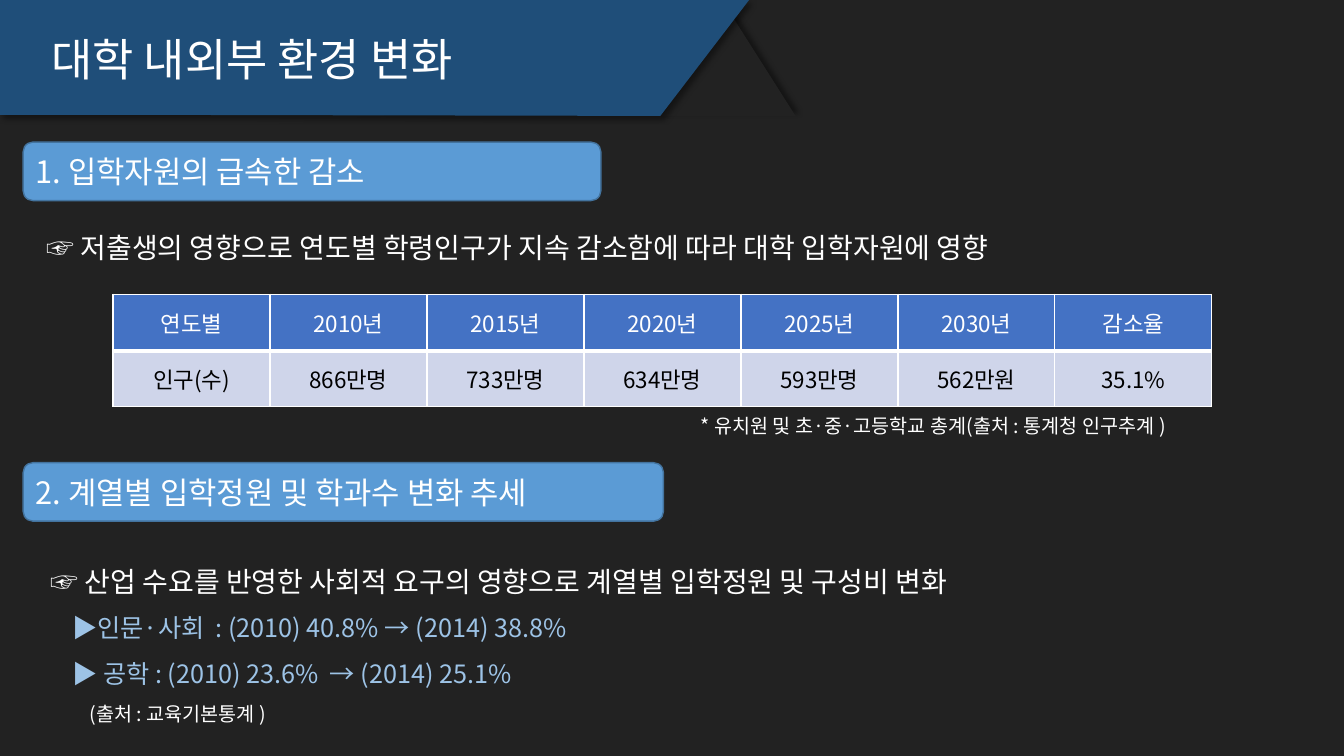
from pptx import Presentation
from pptx.dml.color import RGBColor
from pptx.enum import shapes, text
from pptx.oxml import parse_xml
from pptx.oxml.ns import nsdecls, qn
from pptx.util import Inches, Pt
from lxml import etree

BACK = RGBColor(0x22, 0x22, 0x22)
NAVY = RGBColor(0x1F, 0x4E, 0x79)
BLUE = RGBColor(0x5B, 0x9B, 0xD5)
EDGE = RGBColor(0x43, 0x73, 0x9E)
PALE = RGBColor(0x9D, 0xC3, 0xE6)
HEADER = RGBColor(0x44, 0x72, 0xC4)
ROW = RGBColor(0xCF, 0xD5, 0xEA)
WHITE = RGBColor(0xFF, 0xFF, 0xFF)
BLACK = RGBColor(0, 0, 0)
FONT = "Noto Sans CJK KR"

TITLE = "대학 내외부 환경 변화"
BAND = [(0, 0), (7.43, 0), (6.55, 1.15), (1.55, 1.14), (0, 1.14)]
HEADINGS = [
    ("1. 입학자원의 급속한 감소", 1.41, 5.73),
    ("2. 계열별 입학정원 및 학과수 변화 추세", 4.59, 6.35),
]
POPULATION = [
    ("연도별", "2010년", "2015년", "2020년", "2025년", "2030년", "감소율"),
    ("인구(수)", "866만명", "733만명", "634만명", "593만명", "562만원", "35.1%"),
]
TABLE_BOX = (1.12, 2.92, 10.9, 1.11)
ROW_STYLES = [(HEADER, WHITE, 0.56), (ROW, BLACK, 0.55)]
BORDERS = [
    {"lnL": 1, "lnR": 1, "lnT": 1, "lnB": 3},
    {"lnL": 1, "lnR": 1, "lnT": 3, "lnB": 1},
]
NOTES = [
    ((6.85, 4.06, 5.31, 0.34), [
        ("* 유치원 및 초·중·고등학교 총계(출처 : 통계청 인구추계 )", dict(size=14)),
    ]),
    ((0.3, 2.24, 12.07, 1.11), [
        ("☞ 저출생의 영향으로 연도별 학령인구가 지속 감소함에 따라 대학 입학자원에 영향",
         dict(size=20, indent=0.06)),
    ]),
    ((0.34, 5.38, 12.07, 1.51), [
        ("☞ 산업 수요를 반영한 사회적 요구의 영향으로 계열별 입학정원 및 구성비 변화",
         dict(size=20, indent=0.06, spacing=1.5)),
        ("▶인문·사회  : (2010) 40.8% → (2014) 38.8%",
         dict(size=18, color=PALE, indent=0.28, spacing=1.5)),
        ("▶ 공학 : (2010) 23.6%  → (2014) 25.1%",
         dict(size=18, color=PALE, indent=0.28, spacing=1.5)),
    ]),
    ((0.79, 6.91, 2.49, 0.34), [("(출처 : 교육기본통계 )", dict(size=14))]),
]


def write(p, words, size, color=WHITE, align=text.PP_ALIGN.LEFT, indent=0, spacing=None):
    p.alignment = align
    if spacing:
        p.line_spacing = spacing
    if indent:
        p._p.get_or_add_pPr().set("marL", str(Inches(indent)))
    r = p.add_run()
    r.text = words
    r.font.name, r.font.size, r.font.bold = FONT, Pt(size), False
    r.font.color.rgb = color
    etree.SubElement(r._r.get_or_add_rPr(), qn("a:ea")).set("typeface", FONT)


def paint(sp, fill, line=None):
    sp.shadow.inherit = False
    sp.fill.solid()
    sp.fill.fore_color.rgb = fill
    if line:
        sp.line.color.rgb = line
        sp.line.width = Pt(1)
    else:
        sp.line.fill.background()


def cast_shadow(sp, degrees):
    effects = sp._element.spPr.find(qn("a:effectLst"))
    effects.append(parse_xml(
        f'<a:outerShdw {nsdecls("a")} blurRad="{Pt(4)}" dist="{Pt(3)}" '
        f'dir="{degrees * 60000}" algn="ctr" rotWithShape="0">'
        '<a:srgbClr val="000000"><a:alpha val="40000"/></a:srgbClr></a:outerShdw>'))


def set_borders(cell, widths):
    tcPr = cell._tc.get_or_add_tcPr()
    for i, (side, width) in enumerate(widths.items()):
        tcPr.insert(i, parse_xml(
            f'<a:{side} {nsdecls("a")} w="{Pt(width)}"><a:solidFill>'
            f'<a:srgbClr val="{WHITE}"/></a:solidFill></a:{side}>'))


def add_banner(s):
    sp = s.shapes.add_shape(shapes.MSO_SHAPE.ISOSCELES_TRIANGLE,
                            *map(Inches, (6.57, 0.11, 1.32, 1.04)))
    paint(sp, BACK)
    cast_shadow(sp, 315)
    points = [(Inches(x), Inches(y)) for x, y in BAND]
    builder = s.shapes.build_freeform(*points[0])
    builder.add_line_segments(points[1:], close=True)
    sp = builder.convert_to_shape()
    paint(sp, NAVY)
    cast_shadow(sp, 45)

    title = s.shapes.title
    title.left, title.top, title.width, title.height = map(Inches, (0.41, 0.26, 4.69, 0.64))
    tf = title.text_frame
    tf.word_wrap = False
    tf.auto_size = text.MSO_AUTO_SIZE.NONE
    tf.vertical_anchor = text.MSO_ANCHOR.TOP
    write(tf.paragraphs[0], TITLE, size=32)
    s.shapes._spTree.append(title._element)


def add_heading(s, words, top, width):
    sp = s.shapes.add_shape(shapes.MSO_SHAPE.ROUNDED_RECTANGLE,
                            *map(Inches, (0.23, top, width, 0.58)))
    paint(sp, BLUE, EDGE)
    sp.text_frame.vertical_anchor = text.MSO_ANCHOR.MIDDLE
    write(sp.text_frame.paragraphs[0], words, size=22)


def add_note(s, box, lines):
    tf = s.shapes.add_textbox(*map(Inches, box)).text_frame
    tf.word_wrap = True
    for i, (words, style) in enumerate(lines):
        p = tf.add_paragraph() if i else tf.paragraphs[0]
        write(p, words, **style)


def add_population(s):
    table = s.shapes.add_table(len(POPULATION), len(POPULATION[0]),
                               *map(Inches, TABLE_BOX)).table
    for row, values, (fill, color, height), widths in zip(
            table.rows, POPULATION, ROW_STYLES, BORDERS):
        row.height = Inches(height)
        for cell, value in zip(row.cells, values):
            cell.fill.solid()
            cell.fill.fore_color.rgb = fill
            cell.vertical_anchor = text.MSO_ANCHOR.MIDDLE
            set_borders(cell, widths)
            write(cell.text_frame.paragraphs[0], value, size=16, color=color,
                  align=text.PP_ALIGN.CENTER)


def main():
    prs = Presentation()
    prs.slide_width, prs.slide_height = Inches(13.33), Inches(7.5)
    s = prs.slides.add_slide(prs.slide_layouts[5])
    s.background.fill.solid()
    s.background.fill.fore_color.rgb = BACK
    add_banner(s)
    for heading in HEADINGS:
        add_heading(s, *heading)
    add_population(s)
    for box, lines in NOTES:
        add_note(s, box, lines)
    prs.save("out.pptx")


if __name__ == "__main__":
    main()
